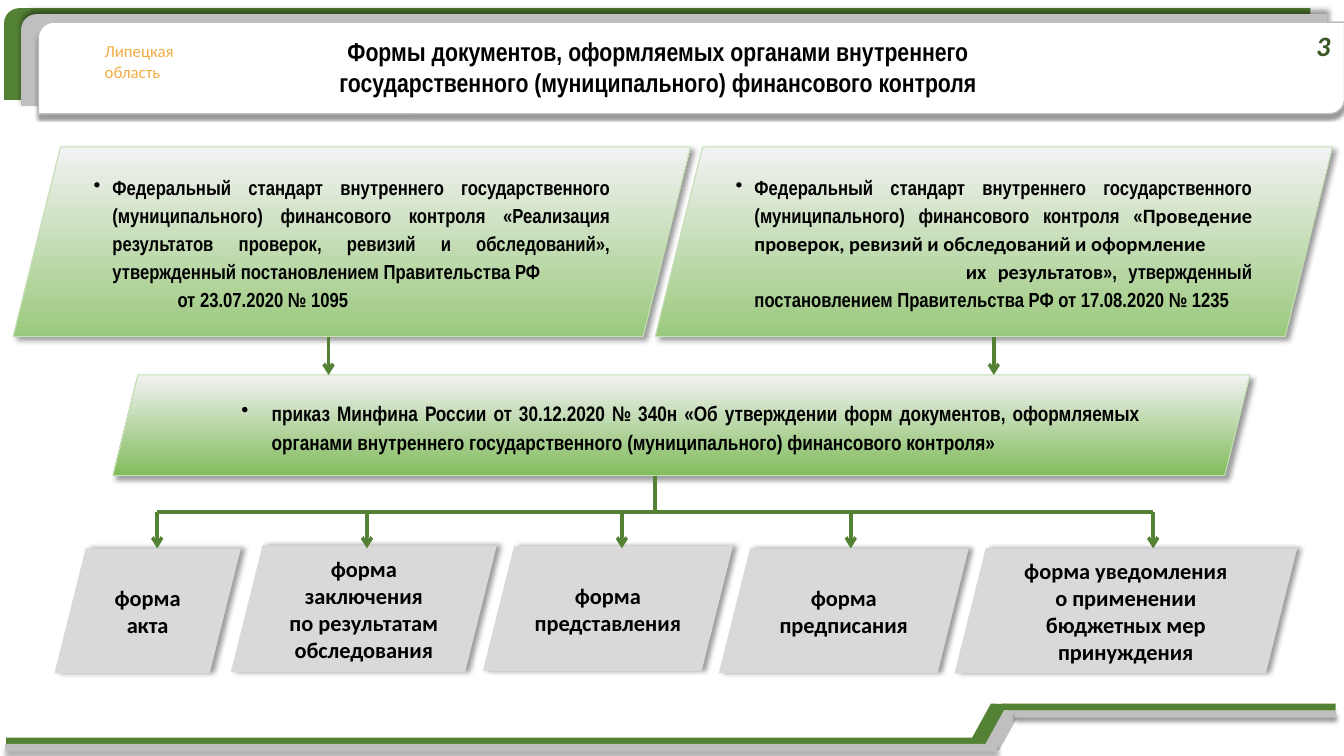
from lxml.etree import SubElement
from pptx import Presentation
from pptx.dml.color import RGBColor
from pptx.enum.shapes import MSO_CONNECTOR, MSO_SHAPE
from pptx.enum.text import MSO_ANCHOR, PP_ALIGN
from pptx.oxml.ns import qn
from pptx.util import Pt

GREEN = RGBColor(0x54, 0x82, 0x35)
DARK_GREEN = RGBColor(0x38, 0x57, 0x23)
MEADOW = RGBColor(0x9A, 0xC9, 0x7D)
GRASS = RGBColor(0x81, 0xBC, 0x5C)
PALE_GREEN = RGBColor(0xC5, 0xE0, 0xB4)
MIST = RGBColor(0xF2, 0xF2, 0xF2)
SILVER = RGBColor(0xD9, 0xD9, 0xD9)
GREY = RGBColor(0xBF, 0xBF, 0xBF)
ORANGE = RGBColor(0xF2, 0xAC, 0x44)
WHITE = RGBColor(0xFF, 0xFF, 0xFF)
BLACK = RGBColor(0, 0, 0)
NARROW, CALIBRI = "Arial Narrow", "Calibri"


class SlideBuilder:
    """Draws the styled elements of one slide, with lengths in points."""

    def __init__(self, slide):
        self.shapes = slide.shapes

    def finish(self, shape, fill, outline=None, shadow=None):
        if isinstance(fill, RGBColor):
            shape.fill.solid()
            shape.fill.fore_color.rgb = fill
        else:
            shape.fill.gradient()
            shape.fill.gradient_angle = 90
            for stop, color in zip(shape.fill.gradient_stops, fill):
                stop.color.rgb = color
        if outline:
            color, width = outline
            shape.line.color.rgb = color
            shape.line.width = Pt(width)
        else:
            shape.line.fill.background()
        shape.shadow.inherit = False
        if shadow:
            blur, distance, angle = shadow
            effects = shape._element.spPr.find(qn("a:effectLst"))
            outer = SubElement(effects, qn("a:outerShdw"), blurRad=str(Pt(blur)),
                               dist=str(Pt(distance)), dir=str(angle * 60000),
                               algn="ctr", rotWithShape="0")
            tone = SubElement(outer, qn("a:srgbClr"), val="000000")
            SubElement(tone, qn("a:alpha"), val="40000")

    def preset(self, kind, place, fill, outline=None, shadow=None):
        shape = self.shapes.add_shape(kind, *map(Pt, place))
        self.finish(shape, fill, outline, shadow)
        return shape

    def outline(self, points, fill):
        corners = [(Pt(x), Pt(y)) for x, y in points]
        builder = self.shapes.build_freeform(*corners[0], scale=1.0)
        builder.add_line_segments(corners[1:], close=True)
        self.finish(builder.convert_to_shape(), fill)

    def line(self, x1, y1, x2, y2, arrow=False):
        connector = self.shapes.add_connector(
            MSO_CONNECTOR.STRAIGHT, Pt(x1), Pt(y1), Pt(x2), Pt(y2))
        connector.line.color.rgb = GREEN
        connector.line.width = Pt(2.5)
        properties = connector._element.spPr
        if arrow:
            SubElement(properties.find(qn("a:ln")), qn("a:tailEnd"), type="arrow")
        SubElement(properties, qn("a:effectLst"))

    def text_box(self, place, lines, size, **style):
        box = self.shapes.add_textbox(*map(Pt, place))
        self.put_text(box, lines, size, **style)

    def put_text(self, shape, lines, size, font=CALIBRI, color=BLACK, bold=True,
                 italic=False, align=PP_ALIGN.CENTER, anchor=MSO_ANCHOR.MIDDLE,
                 inset=None, spacing=None, indents=()):
        frame = shape.text_frame
        frame.word_wrap = True
        frame.vertical_anchor = anchor
        if inset is not None:
            frame.margin_left = frame.margin_right = Pt(inset)
            frame.margin_top = frame.margin_bottom = Pt(inset)
        for index, line in enumerate(lines):
            paragraph = frame.add_paragraph() if index else frame.paragraphs[0]
            paragraph.alignment = align
            if spacing:
                paragraph.line_spacing = spacing
            if indents:
                margin, first = indents[index]
                properties = paragraph._p.get_or_add_pPr()
                properties.set("marL", str(Pt(margin)))
                properties.set("indent", str(Pt(first)))
                if index == 0:
                    SubElement(properties, qn("a:buChar"), char="•")
            paragraph.font.size = Pt(size)
            paragraph.font.bold = bold
            paragraph.font.italic = italic
            paragraph.font.color.rgb = color
            if isinstance(line, str):
                paragraph.font.name = font
                paragraph.add_run().text = line
            else:
                for words, typeface in line:
                    run = paragraph.add_run()
                    run.text = words
                    run.font.name = typeface

    def document(self, place, base, lines, size, indents):
        card = self.preset(MSO_SHAPE.PARALLELOGRAM, place, (base, MIST),
                           (PALE_GREEN, 0.75), (4, 3, 45))
        self.put_text(card, lines, size, font=NARROW, align=PP_ALIGN.JUSTIFY,
                      inset=3, spacing=1.15, indents=indents)


def main():
    presentation = Presentation()
    presentation.slide_width, presentation.slide_height = Pt(960), Pt(540)
    page = SlideBuilder(presentation.slides.add_slide(presentation.slide_layouts[6]))

    header_layers = [
        (2.9, 5.8, GREEN, None, None),
        (15.1, 10.1, GREY, None, (4, 3, 270)),
        (27.4, 15.8, WHITE, (GREY, 1), (2, 3, 90)),
    ]
    for left, top, *look in header_layers:
        page.preset(MSO_SHAPE.ROUND_2_DIAG_RECTANGLE, (left, top, 933.1, 65.5), *look)
    page.text_box((67.7, 25.9, 65.5, 36), ["Липецкая", "область"], 12, color=ORANGE,
                  bold=False, align=PP_ALIGN.LEFT, anchor=MSO_ANCHOR.TOP)

    step = [(691.9, 531.4), (707.8, 502.6), (720, 502.9), (704.2, 531.4)]
    footer_bands = [
        (GREEN, 0, 0, (4.3, 527, 699.8, 5), (715.7, 502.6, 238.3, 5), None),
        (GREY, 9.4, 4.7, (3.6, 531.4, 708.5, 5), (725, 507.6, 229.7, 5), (3, 3, 90)),
    ]
    for color, dx, dy, lower, upper, shadow in footer_bands:
        page.outline([(x + dx, y + dy) for x, y in step], color)
        for bar in (lower, upper):
            page.preset(MSO_SHAPE.RECTANGLE, bar, color, shadow=shadow)

    page.text_box((118.2, 21.6, 703.4, 51.8),
                  ["Формы документов, оформляемых органами внутреннего",
                   "государственного (муниципального) финансового контроля"],
                  18.5, font=NARROW, anchor=MSO_ANCHOR.TOP)

    standard = "Федеральный стандарт внутреннего государственного (муниципального) финансового контроля «"
    results_standard = [
        standard + "Реализация результатов проверок, ревизий и обследований», "
        "утвержденный постановлением Правительства РФ",
        "от 23.07.2020 № 1095",
    ]
    audit_standard = [
        [(standard, NARROW),
         ("Проведение проверок, ревизий и обследований и оформление", CALIBRI)],
        [("их результатов", CALIBRI),
         ("», утвержденный постановлением Правительства РФ от 17.08.2020 № 1235", NARROW)],
    ]
    page.document((9.4, 105, 483.8, 135.5), MEADOW, results_standard, 14.5,
                  [(13.5, -13.5), (13.5, 46.5)])
    page.document((468, 105, 483.8, 135.5), MEADOW, audit_standard, 14.5,
                  [(13.5, -13.5), (13.5, 151)])
    page.document((80.6, 267.8, 812.2, 72), GRASS,
                  ["приказ Минфина России от 30.12.2020 № 340н «Об утверждении форм документов, "
                   "оформляемых органами внутреннего государственного (муниципального) "
                   "финансового контроля»"], 15, [(35.3, -21.6)])
    for x in (234.7, 709.9):
        page.line(x, 240.5, x, 267.8, arrow=True)

    forms = [
        (38.9, 391.7, 133.2, 89.3, ["форма акта"]),
        (164.9, 389.5, 190.1, 90.7, ["форма заключения", "по результатам обследования"]),
        (344.9, 390.2, 178.6, 89.3, ["форма представления"]),
        (513.4, 391.7, 178.6, 89.3, ["форма предписания"]),
        (681.8, 391.7, 244.8, 89.3,
         ["форма уведомления", "о применении бюджетных мер принуждения"]),
    ]
    for *place, caption in forms:
        card = page.preset(MSO_SHAPE.PARALLELOGRAM, place, SILVER, shadow=(4, 3, 0))
        page.put_text(card, caption, 16)

    branches = (112.3, 262.1, 444.2, 607.7, 823.7)
    page.line(branches[0], 365.8, branches[-1], 365.8)
    for x in branches:
        page.line(x, 365.8, x, 391.7, arrow=True)
    page.line(468, 339.8, 468, 365.8)

    page.text_box((935, 19.4, 20.2, 26.6), ["3"], 20, color=DARK_GREEN, italic=True, inset=0)
    presentation.save("out.pptx")


if __name__ == "__main__":
    main()
